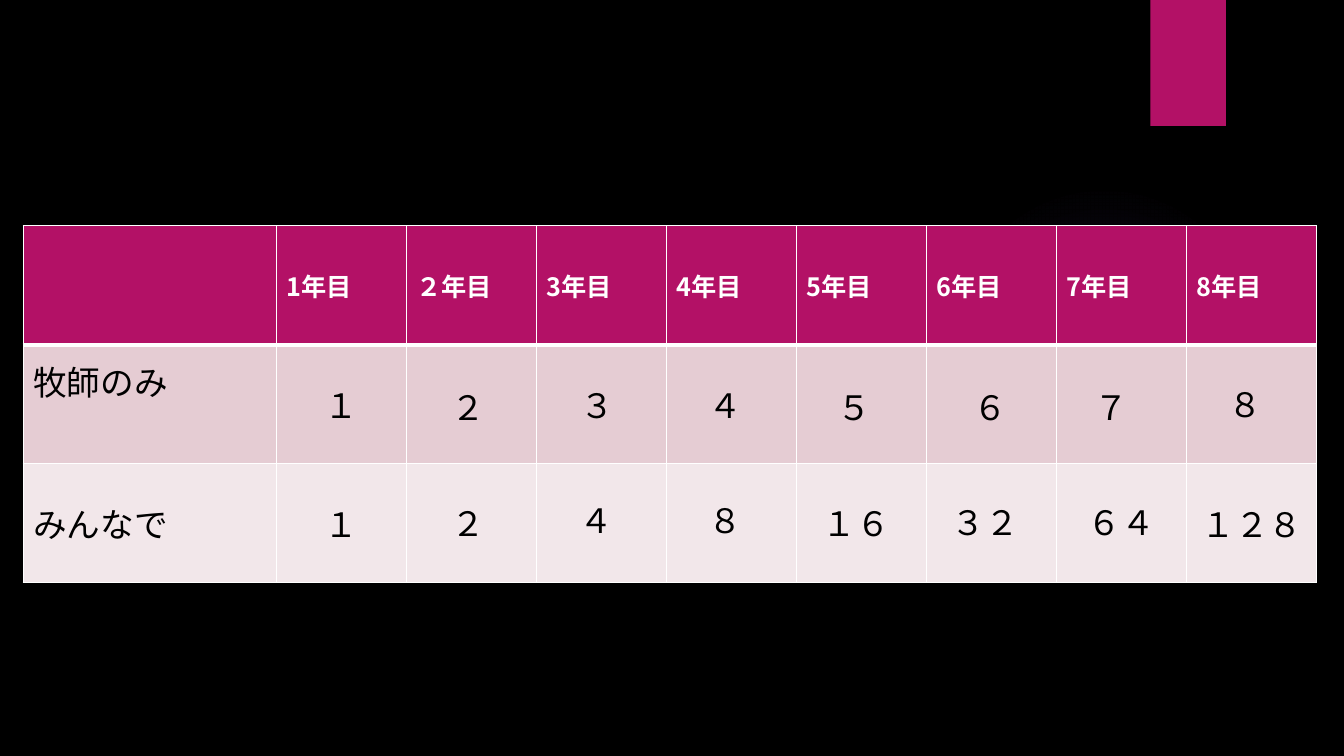
from lxml import etree
from pptx import Presentation, util as u
from pptx.dml.color import RGBColor
from pptx.enum import shapes, text
from pptx.oxml import parse_xml
from pptx.oxml.ns import nsdecls, qn

COLORS = {
    "black": "000000",
    "white": "FFFFFF",
    "pink": "B31166",
    "rose": "E5CCD3",
    "pale": "F2E7EA",
    "glow": "9B6BF2",
}
FONT = "Noto Sans CJK JP"
HEADS = ["", "1年目", "２年目"] + [f"{year}年目" for year in range(3, 9)]
ROWS = [
    HEADS,
    ["牧師のみ", "１"] + [""] * 7,
    ["みんなで", "１"] + [""] * 7,
]
ALONE = [
    ("２", 4.38, 3.79, 0.64),
    ("３", 5.66, 3.77, 0.64),
    ("４", 6.93, 3.77, 0.64),
    ("５", 8.21, 3.79, 0.64),
    ("６", 9.56, 3.79, 0.64),
    ("７", 10.76, 3.79, 0.64),
    ("８", 12.09, 3.76, 0.64),
]
SHARED = [
    ("２", 4.38, 4.94, 0.64),
    ("４", 5.65, 4.91, 0.64),
    ("８", 6.93, 4.91, 0.64),
    ("１６", 8.06, 4.94, 0.93),
    ("３２", 9.34, 4.93, 1.05),
    ("６４", 10.69, 4.93, 1),
    ("１２８", 11.82, 4.95, 1.39),
]


class Deck:
    def __init__(self):
        self.prs = Presentation()
        self.prs.slide_width = u.Inches(13.33)
        self.prs.slide_height = u.Inches(7.5)
        self.slide = self.prs.slides.add_slide(self.prs.slide_layouts[6])
        self.paint(self.slide.background.fill, "black")

    def paint(self, fill, color):
        fill.solid()
        fill.fore_color.rgb = RGBColor.from_string(COLORS[color])

    def box(self, *at):
        return [u.Inches(n) for n in at]

    def style(self, para, size, color, bold=False):
        font = para.font
        font.size = u.Pt(size)
        font.bold = bold
        font.color.rgb = RGBColor.from_string(COLORS[color])
        font.name = FONT
        latin = para._p.pPr.find(qn("a:defRPr")).find(qn("a:latin"))
        east = etree.Element(qn("a:ea"), typeface=FONT)
        latin.addnext(east)

    def shape(self, kind, *at):
        item = self.slide.shapes.add_shape(kind, *self.box(*at))
        item.shadow.inherit = False
        item.line.fill.background()
        return item

    def block(self, color, *at):
        item = self.shape(shapes.MSO_SHAPE.RECTANGLE, *at)
        self.paint(item.fill, color)

    def glow(self, color, stops, *at):
        item = self.shape(shapes.MSO_SHAPE.OVAL, *at)
        marks = "".join(
            f'<a:gs pos="{pos * 1000}"><a:srgbClr val="{COLORS[color]}">'
            f'<a:alpha val="{alpha * 1000}"/></a:srgbClr></a:gs>'
            for pos, alpha in stops
        )
        grad = parse_xml(
            f'<a:gradFill {nsdecls("a")}><a:gsLst>{marks}</a:gsLst>'
            '<a:path path="circle"><a:fillToRect l="50000" t="50000" '
            'r="50000" b="50000"/></a:path></a:gradFill>'
        )
        item._element.spPr.find(qn("a:prstGeom")).addnext(grad)

    def label(self, words, *at):
        item = self.slide.shapes.add_textbox(*self.box(*at))
        frame = item.text_frame
        frame.word_wrap = True
        para = frame.paragraphs[0]
        para.text = words
        self.style(para, 24, "black")

    def border(self, cell, widths):
        props = cell._tc.get_or_add_tcPr()
        for side, width in zip("LRTB", widths):
            props.append(parse_xml(
                f'<a:ln{side} {nsdecls("a")} w="{u.Pt(width)}"><a:solidFill>'
                f'<a:srgbClr val="{COLORS["white"]}"/></a:solidFill></a:ln{side}>'
            ))

    def table(self, rows, widths, height, fills, left, top):
        at = self.box(left, top, sum(widths), height * len(rows))
        grid = self.slide.shapes.add_table(len(rows), len(widths), *at).table
        for col, width in zip(grid.columns, widths):
            col.width = u.Inches(width)
        for r, (row, fill) in enumerate(zip(rows, fills)):
            grid.rows[r].height = u.Inches(height)
            for c, words in enumerate(row):
                cell = grid.cell(r, c)
                self.border(cell, (1, 1, 3 if r == 1 else 1, 3 if r == 0 else 1))
                self.paint(cell.fill, fill)
                cell.vertical_anchor = text.MSO_ANCHOR.MIDDLE
                para = cell.text_frame.paragraphs[0]
                para.text = words
                if r == 0:
                    self.style(para, 18, "white", True)
                else:
                    self.style(para, 24, "black")
                    if c:
                        para.alignment = text.PP_ALIGN.CENTER
        return grid


def main():
    deck = Deck()
    deck.glow("glow", [(0, 7), (36, 6), (69, 0)], 9.41, 1.83, 3.08, 3.08)
    deck.block("pink", 11.41, 0, 0.75, 1.25)
    fills = ["pink", "rose", "pale"]
    grid = deck.table(ROWS, [2.51] + [1.29] * 8, 1.18, fills, 0.23, 2.24)
    grid.cell(1, 0).margin_bottom = u.Inches(0.51)
    for words, left, top, width in ALONE + SHARED:
        deck.label(words, left, top, width, 0.5)
    deck.prs.save("out.pptx")


if __name__ == "__main__":
    main()
